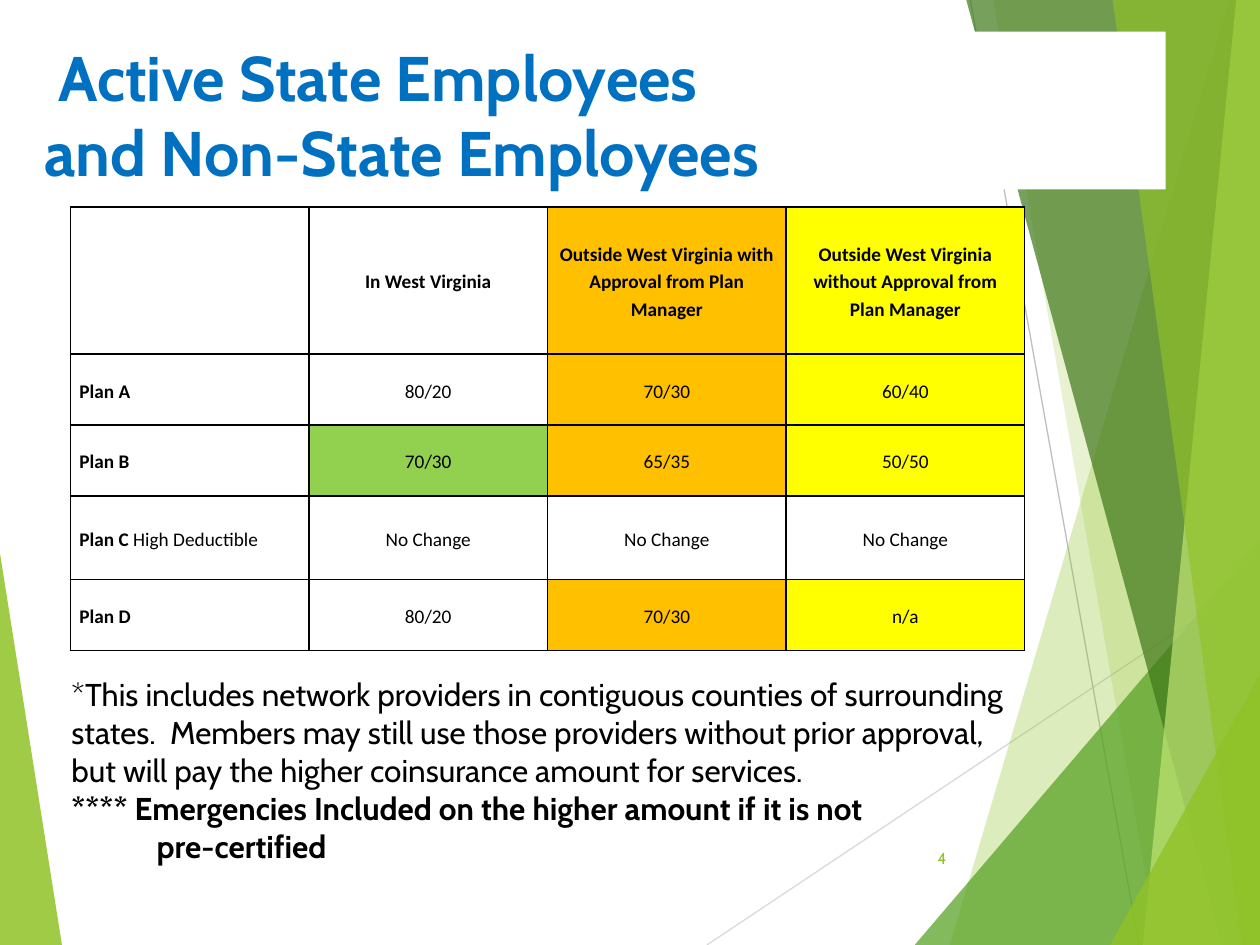
"""Build the slide comparing plan coinsurance inside and outside West Virginia."""
from lxml.etree import SubElement
from pptx import Presentation
from pptx.dml.color import RGBColor
from pptx.enum.shapes import MSO_CONNECTOR
from pptx.enum.text import MSO_ANCHOR, MSO_AUTO_SIZE, PP_ALIGN
from pptx.oxml.ns import qn
from pptx.util import Cm, Pt

BLACK = RGBColor(0x00, 0x00, 0x00)
WHITE = RGBColor(0xFF, 0xFF, 0xFF)
BLUE = RGBColor(0x00, 0x70, 0xC0)
ORANGE = RGBColor(0xFF, 0xC0, 0x00)
YELLOW = RGBColor(0xFF, 0xFF, 0x00)
GREEN = RGBColor(0x92, 0xD0, 0x50)
LIME = RGBColor(0x90, 0xC2, 0x26)
PALE_LIME = RGBColor(0xC0, 0xE4, 0x74)
LEAF = RGBColor(0x54, 0xA0, 0x21)
FOREST = RGBColor(0x3F, 0x78, 0x19)
LIGHT_GREY = RGBColor(0xD9, 0xD9, 0xD9)
GREY = RGBColor(0xBF, 0xBF, 0xBF)

W, H = 25.4, 19.05

TITLE = " Active State Employees\vand Non-State Employees"
HEADER = ["", "In West Virginia",
          "Outside West Virginia with Approval from Plan Manager",
          "Outside West Virginia without Approval from Plan Manager"]
PLANS = [
    ("Plan A", "", "80/20", "70/30", "60/40"),
    ("Plan B", "", "70/30", "65/35", "50/50"),
    ("Plan C", " High Deductible", "No Change", "No Change", "No Change"),
    ("Plan D", "", "80/20", "70/30", "n/a"),
]
COLUMN_FILLS = [WHITE, WHITE, ORANGE, YELLOW]
ROW_HEIGHTS = [2.97, 1.43, 1.43, 1.68, 1.43]
COLUMN_WIDTH = 4.81
NOTE = ("*This includes network providers in contiguous counties of surrounding "
        "states.  Members may still use those providers without prior approval, "
        "but will pay the higher coinsurance amount for services.")
EMERGENCY = "**** Emergencies Included on the higher amount if it is not"
EMERGENCY_END = "pre-certified"
PAGE = "4"


def band(top, bottom):
    return [(top, 0), (bottom, H), (W, H), (W, 0)]


RAYS = [
    ((14.25, H), (W, 11.61), LIGHT_GREY),
    ((19.56, 0), (22.96, H), GREY),
]
LEFT_FACET = ([(0, 11.15), (1.25, H), (0, H)], LIME, 85)
RIGHT_FACETS = [
    (band(24.77, 19.15), LIME, 30),
    (band(20.02, 23.34), LIME, 20),
    ([(18.44, H), (W, 10.9), (W, H)], LEAF, 72),
    (band(19.48, 24.64), FOREST, 70),
    (band(24.92, 23.04), PALE_LIME, 70),
    (band(22.43, 25.04), LIME, 65),
    ([(22.38, H), (W, 13.59), (W, H)], LIME, 80),
]


def write(p, text, font="Cabin", size=18, color=BLACK, bold=False,
          align=PP_ALIGN.LEFT, spacing=None):
    p.alignment = align
    p.line_spacing = spacing
    for i, part in enumerate(text.split("\v")):
        if i:
            p.add_line_break()
        r = p.add_run()
        r.text = part
        r.font.name = font
        r.font.size = Pt(size)
        r.font.bold = bold
        r.font.color.rgb = color


def add_facet(s, points, color, opacity):
    pts = [(Cm(x), Cm(y)) for x, y in points]
    builder = s.shapes.build_freeform(*pts[0], scale=1.0)
    builder.add_line_segments(pts[1:], close=True)
    sp = builder.convert_to_shape()
    sp.shadow.inherit = False
    sp.line.fill.background()
    sp.fill.solid()
    sp.fill.fore_color.rgb = color
    clr = sp.element.spPr.find(qn("a:solidFill"))[0]
    SubElement(clr, qn("a:alpha")).set("val", str(opacity * 1000))


def add_ray(s, start, end, color):
    line = s.shapes.add_connector(MSO_CONNECTOR.STRAIGHT,
                                  *(Cm(v) for v in start + end))
    line.line.color.rgb = color
    line.line.width = Pt(0.75)
    SubElement(line.element.spPr, qn("a:effectLst"))


def add_text_box(s, left, top, width, height):
    tf = s.shapes.add_textbox(Cm(left), Cm(top), Cm(width), Cm(height)).text_frame
    tf.word_wrap = True
    return tf


def add_title(s):
    sp = s.shapes.title
    s.shapes.element.append(sp.element)
    sp.left, sp.top, sp.width, sp.height = Cm(0.64), Cm(0.64), Cm(22.86), Cm(3.18)
    sp.fill.solid()
    sp.fill.fore_color.rgb = WHITE
    tf = sp.text_frame
    tf.auto_size = MSO_AUTO_SIZE.NONE
    tf.vertical_anchor = MSO_ANCHOR.TOP
    write(tf.paragraphs[0], TITLE, size=36, color=BLUE, bold=True)


def format_cell(cell, fill):
    cell.fill.solid()
    cell.fill.fore_color.rgb = fill
    cell.vertical_anchor = MSO_ANCHOR.MIDDLE
    cell.margin_left = cell.margin_right = Cm(0.18)
    cell.margin_top = cell.margin_bottom = 0
    tc_pr = cell._tc.get_or_add_tcPr()
    for i, side in enumerate(("lnL", "lnR", "lnT", "lnB")):
        ln = tc_pr.makeelement(qn(f"a:{side}"), {"w": str(Pt(1))})
        solid = SubElement(ln, qn("a:solidFill"))
        SubElement(solid, qn("a:srgbClr")).set("val", str(BLACK))
        tc_pr.insert(i, ln)


def cell_fill(row, col):
    if row and PLANS[row - 1][col + 1] == "No Change":
        return WHITE
    return GREEN if (row, col) == (2, 1) else COLUMN_FILLS[col]


def add_plan_table(s):
    rows = [[[(text, True)] for text in HEADER]]
    for name, detail, *shares in PLANS:
        rows.append([[(name, True), (detail, False)]] + [[(v, False)] for v in shares])
    table = s.shapes.add_table(len(rows), len(HEADER), Cm(1.42), Cm(4.17),
                               Cm(COLUMN_WIDTH * len(HEADER)),
                               Cm(sum(ROW_HEIGHTS))).table
    for column in table.columns:
        column.width = Cm(COLUMN_WIDTH)
    for i, row in enumerate(rows):
        table.rows[i].height = Cm(ROW_HEIGHTS[i])
        for j, runs in enumerate(row):
            cell = table.cell(i, j)
            format_cell(cell, cell_fill(i, j))
            for text, bold in runs:
                if text:
                    write(cell.text_frame.paragraphs[0], text, font="Calibri",
                          size=11, bold=bold, spacing=1.15,
                          align=PP_ALIGN.CENTER if j else PP_ALIGN.LEFT)


def add_note(s):
    tf = add_text_box(s, 1.19, 13.49, 19.74, 4.88)
    write(tf.paragraphs[0], NOTE)
    write(tf.add_paragraph(), EMERGENCY, bold=True)
    p = tf.add_paragraph()
    write(p, EMERGENCY_END, bold=True)
    p._p.get_or_add_pPr().set("marL", str(Cm(1.72)))


def main():
    prs = Presentation()
    prs.slide_width, prs.slide_height = Cm(W), Cm(H)
    s = prs.slides.add_slide(prs.slide_layouts[5])
    add_facet(s, *LEFT_FACET)
    for ray in RAYS:
        add_ray(s, *ray)
    for facet in RIGHT_FACETS:
        add_facet(s, *facet)
    tf = add_text_box(s, 17.91, 16.79, 1.42, 1.02)
    tf.vertical_anchor = MSO_ANCHOR.MIDDLE
    write(tf.paragraphs[0], PAGE, size=9, color=LIME, align=PP_ALIGN.RIGHT)
    add_title(s)
    add_plan_table(s)
    add_note(s)
    prs.save("out.pptx")


if __name__ == "__main__":
    main()
